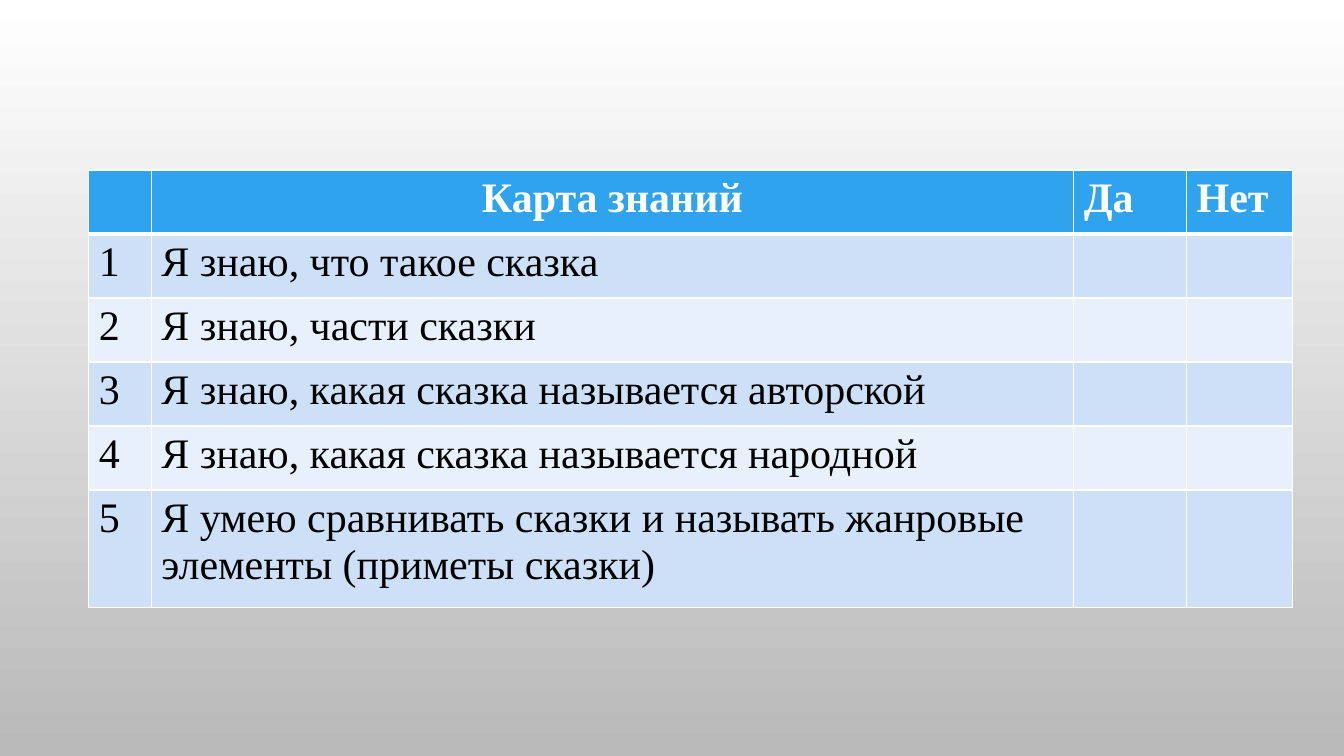
import pptx
import pptx.dml.color
import pptx.enum.text
import pptx.oxml
import pptx.oxml.ns
import pptx.util

FONT = "Times New Roman"
WHITE, BLACK = "FFFFFF", "000000"
HEAD, BANDS = "2FA3EE", ("CDE0F8", "E8F0FC")
WIDE, HIGH = 13.33, 7.5
COLS = (0.62, 9.15, 1.12, 1.05)
SKILLS = (
    "Я знаю, что такое сказка",
    "Я знаю, части сказки",
    "Я знаю, какая сказка называется авторской",
    "Я знаю, какая сказка называется народной",
    "Я умею сравнивать сказки и называть жанровые элементы (приметы сказки)",
)
ROWS = (0.635,) * len(SKILLS) + (1.17,)


def color(code):
    return pptx.dml.color.RGBColor.from_string(code)


class Deck:
    def __init__(self):
        self.show = pptx.Presentation()
        self.show.slide_width = pptx.util.Inches(WIDE)
        self.show.slide_height = pptx.util.Inches(HIGH)
        self.slide = self.show.slides.add_slide(self.show.slide_layouts.get_by_name("Blank"))

    def shade(self, top, base):
        """Fill the background with a gradient running from top to base."""
        fill = self.slide.background.fill
        fill.gradient()
        fill.gradient_angle = 270
        for stop, code, place in zip(fill.gradient_stops, (top, base), (0, 1)):
            stop.color.rgb = color(code)
            stop.position = place

    def border(self, cell, **widths):
        """Draw white edges; widths are points keyed by L, R, T and B."""
        props = cell._tc.get_or_add_tcPr()
        for side, width in widths.items():
            props.append(pptx.oxml.parse_xml(
                f'<a:ln{side} {pptx.oxml.ns.nsdecls("a")} w="{pptx.util.Pt(width)}">'
                f'<a:solidFill><a:srgbClr val="{WHITE}"/></a:solidFill></a:ln{side}>'))

    def cell(self, cell, text, row, col):
        head = row == 0
        self.border(cell, L=1, R=1, T=3 if row == 1 else 1, B=3 if head else 1)
        cell.fill.solid()
        cell.fill.fore_color.rgb = color(HEAD if head else BANDS[(row - 1) % 2])
        cell.text = text
        para = cell.text_frame.paragraphs[0]
        if head and col == 1:
            para.alignment = pptx.enum.text.PP_ALIGN.CENTER
        font = para.font
        font.name, font.size, font.bold = FONT, pptx.util.Pt(30), head
        font.color.rgb = color(WHITE if head else BLACK)

    def table(self, left, top, cols, rows, data):
        """Place a table at shares of the slide, with sizes in inches."""
        inch = pptx.util.Inches
        frame = self.slide.shapes.add_table(
            len(rows), len(cols), inch(left * WIDE), inch(top * HIGH),
            inch(sum(cols)), inch(sum(rows)))
        grid = frame.table
        for col, width in zip(grid.columns, cols):
            col.width = inch(width)
        for row, height in zip(grid.rows, rows):
            row.height = inch(height)
        for y, line in enumerate(data):
            for x, text in enumerate(line):
                self.cell(grid.cell(y, x), text, y, x)


def main():
    deck = Deck()
    deck.shade(WHITE, "B9B9B9")
    data = [("", "Карта знаний", "Да", "Нет")]
    data += [(str(n), skill, "", "") for n, skill in enumerate(SKILLS, 1)]
    deck.table(0.066, 0.225, COLS, ROWS, data)
    deck.show.save("out.pptx")


if __name__ == "__main__":
    main()
